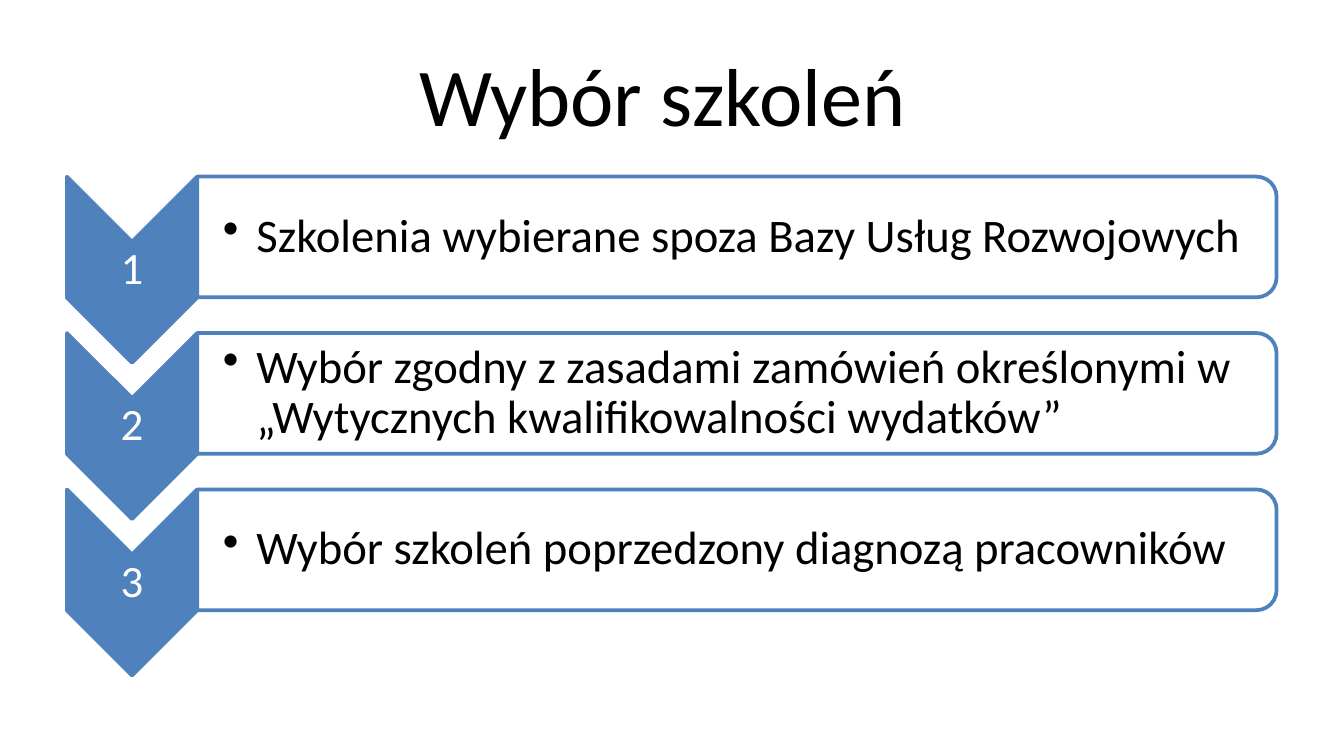
from lxml.etree import SubElement
from pptx import Presentation
from pptx.dml.color import RGBColor
from pptx.enum.shapes import MSO_SHAPE
from pptx.enum.text import MSO_ANCHOR, PP_ALIGN
from pptx.oxml.ns import qn
from pptx.util import Pt

COLOURS = {"accent": "4F81BD", "panel": "FFFFFF", "light": "FFFFFF", "dark": "000000"}
STEPS = [
    "Szkolenia wybierane spoza Bazy Usług Rozwojowych",
    "Wybór zgodny z zasadami zamówień określonymi w „Wytycznych kwalifikowalności wydatków”",
    "Wybór szkoleń poprzedzony diagnozą pracowników",
]
ROW_PITCH = 83.8
PANEL_CENTRE_Y = 127
CHEVRON_CENTRE_Y = 144.5


def colour(name):
    return RGBColor.from_string(COLOURS[name])


class SlideBuilder:
    font_name = "Calibri"
    line_width = 2

    def __init__(self, slide):
        self.slide = slide

    def add_text(self, text, left, top, width, height, *, size, color="dark",
                 align=PP_ALIGN.LEFT, margins=(7.2, 3.6, 7.2, 3.6),
                 line_spacing=1.0, bullet_indent=0):
        """Add a vertically centred text box; margins run left, top, right, bottom."""
        box = self.slide.shapes.add_textbox(Pt(left), Pt(top), Pt(width), Pt(height))
        frame = box.text_frame
        frame.word_wrap = True
        frame.vertical_anchor = MSO_ANCHOR.MIDDLE
        (frame.margin_left, frame.margin_top,
         frame.margin_right, frame.margin_bottom) = map(Pt, margins)
        paragraph = frame.paragraphs[0]
        paragraph.alignment = align
        paragraph.line_spacing = line_spacing
        if bullet_indent:
            properties = paragraph._p.get_or_add_pPr()
            properties.set("marL", str(Pt(bullet_indent)))
            properties.set("indent", str(Pt(-bullet_indent)))
            SubElement(properties, qn("a:buChar"), char="•")
        run = paragraph.add_run()
        run.text = text
        run.font.name = self.font_name
        run.font.size = Pt(size)
        run.font.color.rgb = colour(color)

    def add_turned_shape(self, kind, centre_x, centre_y, width, height, fill, opacity=100):
        """Add a shape turned a quarter clockwise; width and height are as before the turn."""
        shape = self.slide.shapes.add_shape(
            kind, Pt(centre_x - width / 2), Pt(centre_y - height / 2), Pt(width), Pt(height))
        shape.rotation = 90
        shape.shadow.inherit = False
        shape.fill.solid()
        shape.fill.fore_color.rgb = colour(fill)
        if opacity < 100:
            fill_colour = shape._element.spPr.find(qn("a:solidFill")).find(qn("a:srgbClr"))
            SubElement(fill_colour, qn("a:alpha"), val=str(opacity * 1000))
        shape.line.color.rgb = colour("accent")
        shape.line.width = Pt(self.line_width)

    def add_step(self, index, text):
        offset = index * ROW_PITCH
        chevron_y = CHEVRON_CENTRE_Y + offset
        panel_y = PANEL_CENTRE_Y + offset
        self.add_turned_shape(MSO_SHAPE.CHEVRON, 70.7, chevron_y, 99.6, 69.7, "accent")
        self.add_text(str(index + 1), 35.9, chevron_y - 15, 69.7, 30, size=24,
                      color="light", align=PP_ALIGN.CENTER,
                      margins=(1.2, 1.2, 1.2, 1.2), line_spacing=0.9)
        self.add_turned_shape(MSO_SHAPE.ROUND_2_SAME_RECTANGLE, 394.8, panel_y,
                              64.7, 578.2, "panel", opacity=90)
        self.add_text(text, 105.7, panel_y - 29.2, 575, 58.4, size=25,
                      margins=(13.7, 1.2, 1.2, 1.2), line_spacing=0.9, bullet_indent=18)


def main():
    presentation = Presentation()
    presentation.slide_width = Pt(720)
    presentation.slide_height = Pt(405)
    builder = SlideBuilder(presentation.slides.add_slide(presentation.slide_layouts[6]))
    builder.add_text("Wybór szkoleń ", 36, 16.2, 648, 67.5, size=44, align=PP_ALIGN.CENTER)
    for index, text in enumerate(STEPS):
        builder.add_step(index, text)
    presentation.save("out.pptx")


if __name__ == "__main__":
    main()
